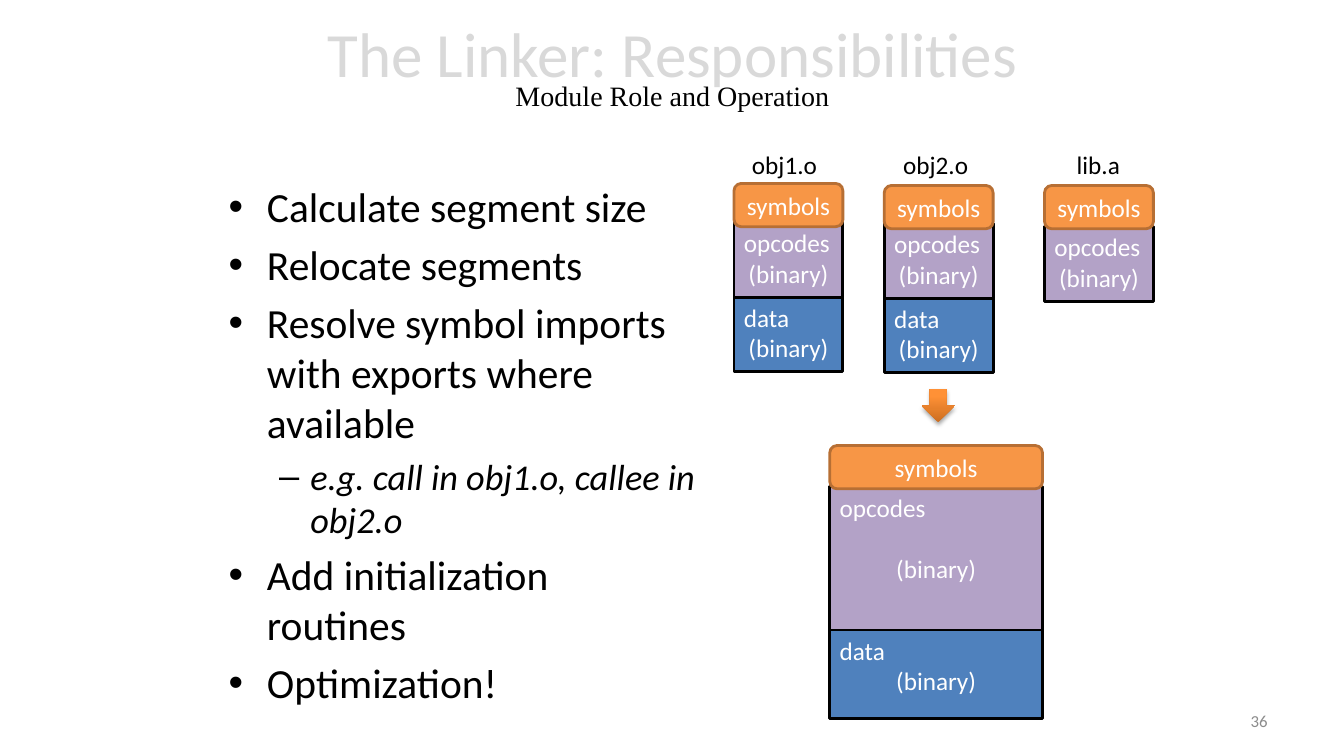
from dataclasses import dataclass

from lxml import etree
from pptx import Presentation
from pptx.dml.color import RGBColor
from pptx.enum.shapes import MSO_SHAPE
from pptx.enum.text import MSO_ANCHOR, MSO_AUTO_SIZE, PP_ALIGN
from pptx.oxml.ns import qn
from pptx.util import Inches, Pt

RECT, ROUNDED, DOWN_ARROW = MSO_SHAPE.RECTANGLE, MSO_SHAPE.ROUNDED_RECTANGLE, MSO_SHAPE.DOWN_ARROW
TOP, MIDDLE = MSO_ANCHOR.TOP, MSO_ANCHOR.MIDDLE
LEFT, CENTER, RIGHT = PP_ALIGN.LEFT, PP_ALIGN.CENTER, PP_ALIGN.RIGHT
NO_AUTOFIT = MSO_AUTO_SIZE.NONE
TITLE_ONLY = 5


@dataclass(frozen=True)
class Theme:
    """Fonts, colours and type sizes of the slide."""
    font: str = "Calibri"
    subtitle_font: str = "Times New Roman"
    black: str = "000000"
    white: str = "FFFFFF"
    title: str = "D9D9D9"
    number: str = "8C8C8C"
    data: str = "4F81BD"
    opcodes: str = "B3A2C7"
    symbols: str = "F79646"
    symbols_edge: str = "B76F34"
    arrow_dark: str = "CC6E20"
    arrow_light: str = "FF9136"
    title_size: float = 45
    subtitle_size: float = 20
    bullet_size: float = 29.6
    sub_bullet_size: float = 25.9
    label_size: float = 18
    number_size: float = 12


THEME = Theme()
SYMBOLS_HEIGHT = 0.43

BULLETS = [
    (0, "Calculate segment size"),
    (0, "Relocate segments"),
    (0, "Resolve symbol imports with exports where available"),
    (1, "e.g. call in obj1.o, callee in obj2.o"),
    (0, "Add initialization routines"),
    (0, "Optimization!"),
]
BULLET_LEVELS = [
    ("•", 0.38, -0.38, THEME.bullet_size, False),
    ("–", 0.81, -0.31, THEME.sub_bullet_size, True),
]

OPCODES = ("opcodes", THEME.opcodes)
DATA = ("data", THEME.data)
INPUT_MODULES = [
    ("obj1.o", 7.36, (7.28, 1.82), 0.39, [OPCODES, DATA]),
    ("obj2.o", 8.86, (8.77, 1.84), 0.38, [OPCODES, DATA]),
    ("lib.a", 10.58, (10.36, 1.84), 0.41, [OPCODES]),
]


def inches(box):
    """Turn a box of numbers into lengths."""
    return [Inches(value) for value in box]


def add_run(paragraph, text, size, color, font=THEME.font, italic=False):
    """Append one formatted run to a paragraph."""
    run = paragraph.add_run()
    run.text = text
    run.font.name = font
    run.font.size = Pt(size)
    run.font.italic = italic
    run.font.color.rgb = RGBColor.from_string(color)


def add_label(slide, box, text, size, color, align=LEFT, anchor=TOP, wrap=True):
    """Place a one-line text box."""
    frame = slide.shapes.add_textbox(*inches(box)).text_frame
    frame.word_wrap = wrap
    frame.vertical_anchor = anchor
    frame.paragraphs[0].alignment = align
    add_run(frame.paragraphs[0], text, size, color)


def add_block(slide, preset, box, fill, edge, anchor):
    """Draw a filled, outlined block and return its text frame."""
    block = slide.shapes.add_shape(preset, *inches(box))
    block.shadow.inherit = False
    block.fill.solid()
    block.fill.fore_color.rgb = RGBColor.from_string(fill)
    block.line.color.rgb = RGBColor.from_string(edge)
    block.line.width = Pt(2)
    block.text_frame.vertical_anchor = anchor
    return block.text_frame


def add_title(slide, box):
    """Fill the title placeholder with the heading and its subtitle."""
    title = slide.shapes.title
    title.left, title.top, title.width, title.height = inches(box)
    frame = title.text_frame
    frame.auto_size = NO_AUTOFIT
    frame.vertical_anchor = MIDDLE
    heading = frame.paragraphs[0]
    heading.alignment = CENTER
    heading.line_spacing = 0.7
    add_run(heading, "The Linker: Responsibilities", THEME.title_size, THEME.title)
    heading.add_line_break()
    add_run(heading, "Module Role and Operation", THEME.subtitle_size, THEME.black, THEME.subtitle_font)


def add_responsibilities(slide, box):
    """Write the two-level bullet list."""
    frame = slide.shapes.add_textbox(*inches(box)).text_frame
    frame.word_wrap = True
    for index, (level, text) in enumerate(BULLETS):
        mark, margin, indent, size, italic = BULLET_LEVELS[level]
        item = frame.add_paragraph() if index else frame.paragraphs[0]
        item.level = level
        item.space_before = Pt(size * 0.2)
        properties = item._p.get_or_add_pPr()
        properties.set("marL", str(Inches(margin)))
        properties.set("indent", str(Inches(indent)))
        etree.SubElement(properties, qn("a:buFont"), typeface="Arial")
        etree.SubElement(properties, qn("a:buChar"), char=mark)
        add_run(item, text, size, THEME.black, italic=italic)


def add_segment(slide, box, name, fill, gap=0):
    """Draw one binary segment of a module."""
    frame = add_block(slide, RECT, box, fill, THEME.black, TOP)
    heading, content = frame.paragraphs[0], frame.add_paragraph()
    heading.alignment = LEFT
    content.alignment = CENTER
    content.space_before = Pt(gap)
    add_run(heading, name, THEME.label_size, THEME.white)
    add_run(content, "(binary)", THEME.label_size, THEME.white)


def add_module(slide, corner, width, offset, segments):
    """Stack segments of (name, fill, height, gap) below a symbol table."""
    left, top = corner
    segment_top = top + offset
    for name, fill, height, gap in segments:
        add_segment(slide, (left, segment_top, width, height), name, fill, gap)
        segment_top += height
    frame = add_block(slide, ROUNDED, (left, top, width, SYMBOLS_HEIGHT),
                      THEME.symbols, THEME.symbols_edge, MIDDLE)
    frame.paragraphs[0].alignment = CENTER
    add_run(frame.paragraphs[0], "symbols", THEME.label_size, THEME.white)


def add_link_arrow(slide, box):
    """Draw the shaded arrow from the inputs to the linked module."""
    arrow = slide.shapes.add_shape(DOWN_ARROW, *inches(box))
    arrow.line.fill.background()
    arrow.fill.gradient()
    arrow.fill.gradient_angle = 90
    stops = zip(arrow.fill.gradient_stops, (0, 0.8), (THEME.arrow_dark, THEME.arrow_light))
    for stop, position, color in stops:
        stop.position = position
        stop.color.rgb = RGBColor.from_string(color)
    effects = etree.SubElement(arrow._element.spPr, qn("a:effectLst"))
    shadow = etree.SubElement(effects, qn("a:outerShdw"), blurRad=str(Pt(3.1)),
                              dist=str(Pt(1.8)), dir="5400000", rotWithShape="0")
    tint = etree.SubElement(shadow, qn("a:srgbClr"), val=THEME.black)
    etree.SubElement(tint, qn("a:alpha"), val="35000")


def main():
    """Build and save the slide."""
    deck = Presentation()
    deck.slide_width, deck.slide_height = Inches(13.33), Inches(7.5)
    slide = deck.slides.add_slide(deck.slide_layouts[TITLE_ONLY])
    add_title(slide, (1.67, 0, 10, 1.45))
    add_responsibilities(slide, (2.17, 1.75, 4.83, 4.95))
    for name, label_left, corner, offset, segments in INPUT_MODULES:
        add_label(slide, (label_left, 1.43, 0.85, 0.4), name, THEME.label_size, THEME.black)
        add_module(slide, corner, 1.08, offset, [(*segment, 0.74, 0) for segment in segments])
    add_link_arrow(slide, (9.14, 3.86, 0.33, 0.33))
    add_module(slide, (8.23, 4.42), 2.11, 0.41, [(*OPCODES, 1.42, 22), (*DATA, 0.88, 0)])
    add_label(slide, (9.56, 6.95, 3.11, 0.4), "36", THEME.number_size, THEME.number, RIGHT, MIDDLE)
    deck.save("out.pptx")


if __name__ == "__main__":
    main()
